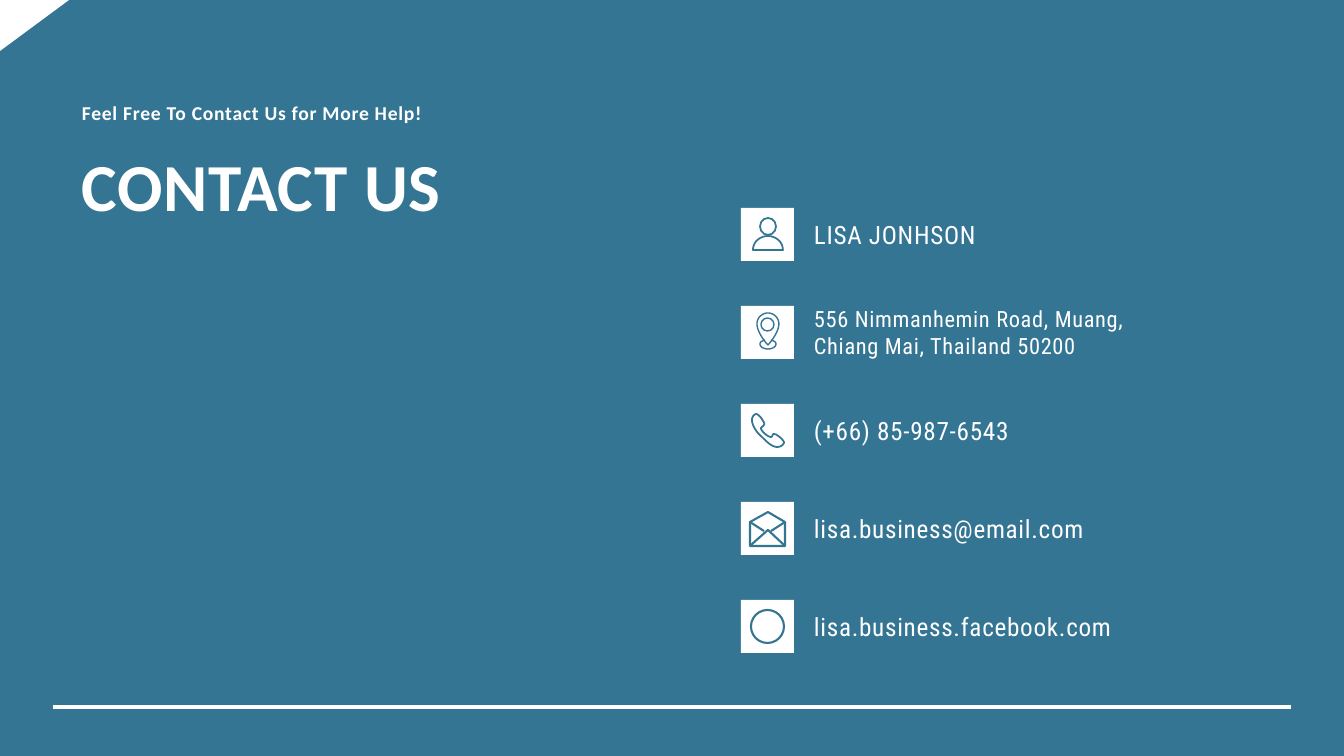
from pptx import Presentation
from pptx.dml.color import RGBColor as RGB
from pptx.enum.shapes import MSO_CONNECTOR as CONN, MSO_SHAPE as SHAPE
from pptx.enum.text import MSO_ANCHOR as ANCHOR
from pptx.oxml.ns import qn
from pptx.util import Pt
from lxml.etree import SubElement

# Content
COLORS = {"blue": "347593", "white": "FFFFFF"}
TAGLINE = "Feel Free To Contact Us for More Help!"
TITLE = "CONTACT US"

# Icon parts, in px from the tile corner: an oval is a box; a path is a start
# followed by line ends (2 numbers) and cubic curves (6 numbers)
PERSON = [
    ("oval", (19, 10, 16, 17)),
    ("closed", [(12, 42), (12, 34, 19, 28, 27, 28), (35, 28, 42, 34, 42, 42)]),
]
PIN = [
    ("oval", (20, 12, 13, 13)),
    ("closed", [(27, 39), (23, 35, 16, 25, 16, 18), (16, 12, 21, 7, 27, 7),
                (33, 7, 38, 12, 38, 18), (38, 25, 31, 35, 27, 39)]),
    ("open", [(24, 34), (21, 35, 19, 36, 19, 38), (19, 41, 23, 43, 27, 43),
              (31, 43, 35, 41, 35, 38), (35, 36, 33, 35, 30, 34)]),
]
PHONE = [
    ("closed", [(15, 10), (12, 11, 11, 14, 11, 16), (11, 21, 15, 28, 21, 33),
                (26, 38, 31, 43, 36, 43), (40, 43, 42, 41, 43, 39),
                (44, 37, 36, 30, 33, 30), (31, 30, 32, 33, 30, 33),
                (28, 33, 25, 31, 22, 28), (19, 24, 20, 24, 21, 23),
                (25, 20, 23, 19, 21, 15), (18, 11, 16, 10, 15, 10)]),
]
ENVELOPE = [
    ("closed", [(27, 10), (9, 20), (9, 44), (44, 44), (44, 20)]),
    ("open", [(9, 20), (23, 29)]),
    ("open", [(44, 20), (30, 29)]),
    ("open", [(10, 43), (27, 28), (43, 43)]),
]
DISC = [("oval", (10, 10, 33, 33))]

# Text, size in pt, icon, icon line width in pt
CONTACTS = [
    ("LISA JONHSON", 18, PERSON, 1.25),
    ("556 Nimmanhemin Road, Muang, Chiang Mai, Thailand 50200", 16, PIN, 1),
    ("(+66) 85-987-6543", 18, PHONE, 1.25),
    ("lisa.business@email.com", 18, ENVELOPE, 1.5),
    ("lisa.business.facebook.com", 18, DISC, 1.5),
]

# Layout in px
WIDTH, HEIGHT = 1344, 756
PX = 12192000 / WIDTH
TILE_X, TILE_Y, TILE, PITCH = 741, 208, 53, 98
TEXT_X, TEXT_W = 804, 394
CURVE_STEPS = 10


def emu(*lengths):
    return [round(v * PX) for v in lengths]


def color(name):
    return RGB.from_string(COLORS[name])


def paint(shape, fill=None, line=None, width=1):
    shape.shadow.inherit = False
    if fill:
        shape.fill.solid()
        shape.fill.fore_color.rgb = color(fill)
    else:
        shape.fill.background()
    if line:
        shape.line.color.rgb = color(line)
        shape.line.width = Pt(width)
    else:
        shape.line.fill.background()


def add_text(s, box, text, font, frame=None, para=None):
    tf = s.shapes.add_textbox(*emu(*box)).text_frame
    for name, value in {"word_wrap": True, **(frame or {})}.items():
        setattr(tf, name, value)
    p = tf.paragraphs[0]
    for name, value in (para or {}).items():
        setattr(p, name, value)
    r = p.add_run()
    r.text = text
    r.font.color.rgb = color("white")
    for name, value in font.items():
        setattr(r.font, name, value)
    r._r.get_or_add_rPr().set("spc", "50")


def trace(path):
    """Turn lines and cubic curves into points."""
    points = [path[0]]
    for seg in path[1:]:
        if len(seg) == 2:
            points.append(seg)
            continue
        curve = [points[-1], seg[:2], seg[2:4], seg[4:]]
        for i in range(1, CURVE_STEPS + 1):
            t = i / CURVE_STEPS
            weights = ((1 - t) ** 3, 3 * t * (1 - t) ** 2, 3 * t * t * (1 - t), t ** 3)
            points.append(tuple(sum(w * c[axis] for w, c in zip(weights, curve))
                                for axis in (0, 1)))
    return points


def add_icon(s, x, y, parts, width):
    for kind, data in parts:
        if kind == "oval":
            left, top, w, h = data
            sp = s.shapes.add_shape(SHAPE.OVAL, *emu(x + left, y + top, w, h))
        else:
            points = [emu(x + px, y + py) for px, py in trace(data)]
            outline = s.shapes.build_freeform(*points[0])
            outline.add_line_segments(points[1:], close=kind == "closed")
            sp = outline.convert_to_shape()
        paint(sp, line="blue", width=width)


def main():
    prs = Presentation()
    prs.slide_width, prs.slide_height = emu(WIDTH, HEIGHT)
    s = prs.slides.add_slide(prs.slide_layouts[6])
    s.background.fill.solid()
    s.background.fill.fore_color.rgb = color("blue")

    # Bottom rule and corner triangle
    rule = s.shapes.add_connector(CONN.STRAIGHT, *emu(53, 707, 1291, 707))
    rule.line.color.rgb = color("white")
    rule.line.width = Pt(2.25)
    SubElement(rule._element.spPr, qn("a:effectLst"))
    corner = s.shapes.add_shape(SHAPE.RIGHT_TRIANGLE, *emu(0, 0, 69, 51))
    corner._element.spPr.xfrm.set("flipV", "1")
    paint(corner, fill="white")

    # Heading
    add_text(s, (72, 144, 619, 146), TITLE,
             {"name": "Calibri", "size": Pt(48), "bold": True}, {"margin_top": 0})
    add_text(s, (72, 100, 619, 32), TAGLINE,
             {"name": "Calibri", "size": Pt(14), "bold": True},
             {"margin_top": emu(4)[0]}, {"line_spacing": 0.9})

    # Contact rows
    for i, (text, size, icon, width) in enumerate(CONTACTS):
        y = TILE_Y + i * PITCH
        tile = s.shapes.add_shape(SHAPE.RECTANGLE, *emu(TILE_X, y, TILE, TILE))
        paint(tile, fill="white")
        add_icon(s, TILE_X, y, icon, width)
        add_text(s, (TEXT_X, y, TEXT_W, TILE), text,
                 {"name": "Roboto Condensed", "size": Pt(size)},
                 {"vertical_anchor": ANCHOR.MIDDLE})

    prs.save("out.pptx")


if __name__ == "__main__":
    main()
